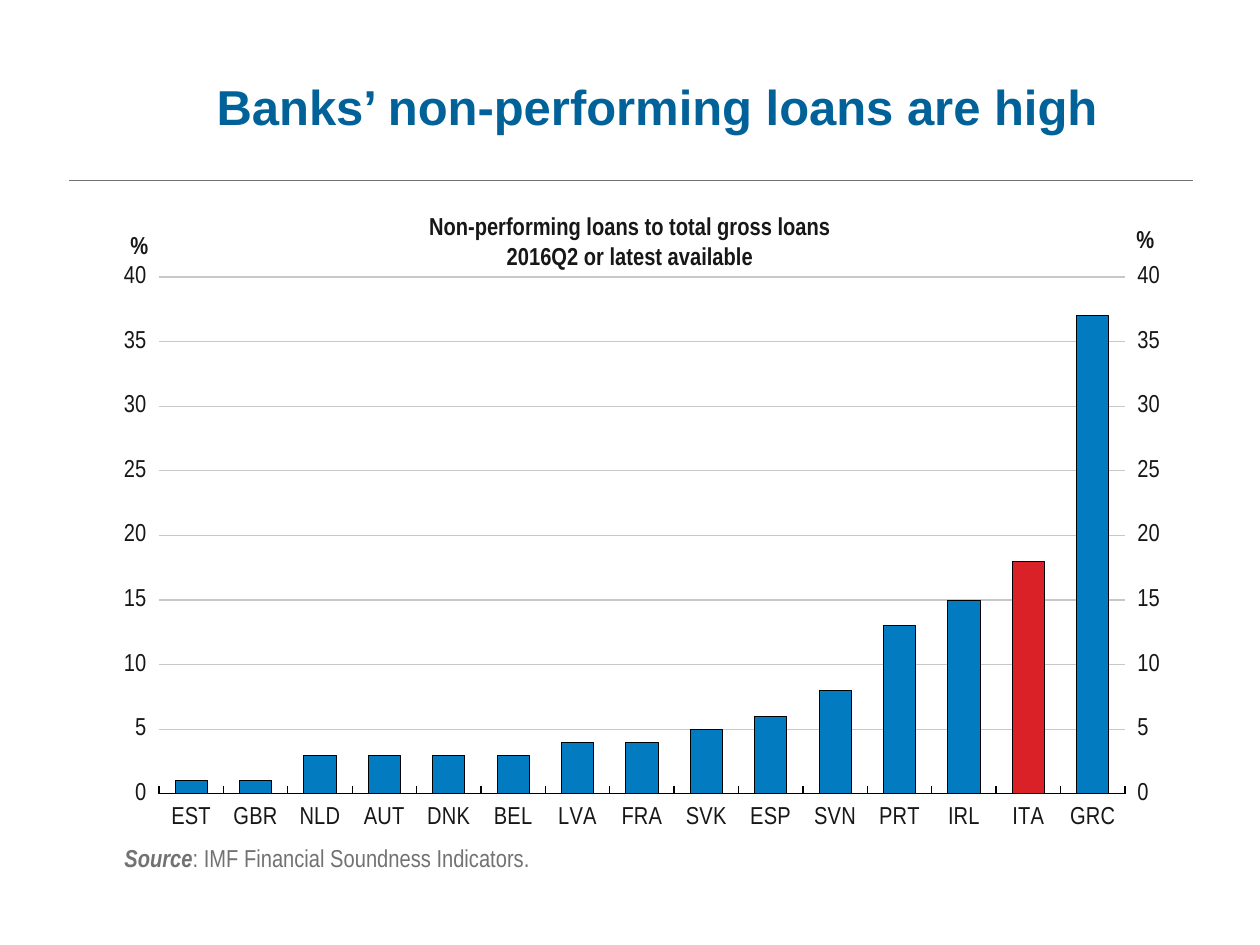
from copy import deepcopy

from lxml import etree
from pptx import Presentation
from pptx import util as u
from pptx.chart.data import CategoryChartData
from pptx.dml.color import RGBColor
from pptx.enum import chart as charts, shapes, text
from pptx.oxml.ns import qn

# Content
TITLE = "Banks’ non-performing loans are high"
SUBTITLE = "Non-performing loans to total gross loans\v2016Q2 or latest available"
SOURCE = ("Source", ": IMF Financial Soundness Indicators.")
UNIT = "%"
LOANS = {
    "EST": 1, "GBR": 1, "NLD": 3, "AUT": 3, "DNK": 3,
    "BEL": 3, "LVA": 4, "FRA": 4, "SVK": 5, "ESP": 6,
    "SVN": 8, "PRT": 13, "IRL": 15, "ITA": 18, "GRC": 37,
}
HIGHLIGHT = "ITA"

# Style
NARROW = "Arial Narrow"
NAVY, BLUE, RED = "006299", "037BC1", "DA2128"
INK, GREY, GRID, BLACK, WHITE = "171717", "727272", "C8C8C8", "000000", "FFFFFF"

# Places in px: left, top, width, height
PAGE = (1260, 945)
TITLE_AT = (94, 35, 1126, 141)
RULE_AT = (69, 180, 1193, 180)
CHART_AT = (112, 204, 1053, 631)
PLOT_AT = (159, 277, 966, 517)
SUBTITLE_AT = (315, 205, 630, 72)
SOURCE_AT = (112, 837, 964, 72)
LEFT_UNIT_AT = (126, 229)
RIGHT_UNIT_AT = (1132, 223)


def px(*lengths):
    return [u.Emu(round(n * 914400 / 126)) for n in lengths]


def color(value):
    return RGBColor.from_string(value)


def style_font(font, size, name, value, bold=False):
    font.size, font.name, font.bold = u.Pt(size), name, bold
    font.color.rgb = color(value)


def style_line(line, value, width):
    line.color.rgb = color(value)
    line.width = u.Pt(width)


def style_bar(bar, value):
    bar.format.fill.solid()
    bar.format.fill.fore_color.rgb = color(value)
    style_line(bar.format.line, BLACK, 0.5)


def add_text(page, place):
    box = page.shapes.add_textbox(*px(*place))
    box.text_frame.word_wrap = True
    return box.text_frame.paragraphs[0]


def set_layout(layout, place, inner=False):
    """Fix a chart part at a place given in page px."""
    for child in list(layout):
        layout.remove(child)
    manual = etree.SubElement(layout, qn("c:manualLayout"))
    left, top, width, height = CHART_AT
    x, y, *size = place
    values = {"xMode": "edge", "yMode": "edge",
              "x": (x - left) / width, "y": (y - top) / height}
    if inner:
        values = {"layoutTarget": "inner", **values,
                  "w": size[0] / width, "h": size[1] / height}
    for tag, value in values.items():
        shown = value if isinstance(value, str) else f"{value:.4f}"
        etree.SubElement(manual, qn(f"c:{tag}"), val=shown)


def add_right_axis(plot_area):
    """Move the second series to its own axes, with values on the right."""
    left_bars = plot_area.find(qn("c:barChart"))
    right_bars = deepcopy(left_bars)
    left_bars.remove(left_bars.findall(qn("c:ser"))[1])
    right_bars.remove(right_bars.find(qn("c:ser")))
    left_bars.addnext(right_bars)

    left_values = plot_area.find(qn("c:valAx"))
    values = deepcopy(left_values)
    categories = deepcopy(plot_area.find(qn("c:catAx")))
    left_values.addnext(values)
    values.addnext(categories)

    ids = [part.get("val") for part in left_bars.findall(qn("c:axId"))]
    new_ids = dict(zip(ids, ("5001", "5002")))
    for group in (right_bars, values, categories):
        for part in group.iter(qn("c:axId"), qn("c:crossAx")):
            part.set("val", new_ids[part.get("val")])

    categories.find(qn("c:delete")).set("val", "1")
    values.find(qn("c:axPos")).set("val", "r")
    values.find(qn("c:crosses")).set("val", "max")
    values.remove(values.find(qn("c:majorGridlines")))
    set_layout(values.find(qn("c:title")).find(qn("c:layout")), RIGHT_UNIT_AT)


def add_loans_chart(page):
    data = CategoryChartData()
    data.categories = list(LOANS)
    data.add_series("Series 1", list(LOANS.values()))
    data.add_series("Series 2", [None] * len(LOANS))
    chart = page.shapes.add_chart(
        charts.XL_CHART_TYPE.COLUMN_CLUSTERED, *px(*CHART_AT), data).chart
    chart.has_title = chart.has_legend = False
    style_font(chart.font, 14, NARROW, INK)

    # Bars
    plot = chart.plots[0]
    plot.gap_width = 100
    plot.vary_by_categories = False
    bars = plot.series[0]
    bars.invert_if_negative = False
    style_bar(bars, BLUE)
    style_bar(bars.points[list(LOANS).index(HIGHLIGHT)], RED)

    # Axes
    countries, share = chart.category_axis, chart.value_axis
    countries.tick_label_position = charts.XL_TICK_LABEL_POSITION.LOW
    countries.major_tick_mark = charts.XL_TICK_MARK.INSIDE
    style_line(countries.format.line, BLACK, 0.75)
    share.minimum_scale, share.maximum_scale, share.major_unit = 0, 40, 5
    share.major_tick_mark = charts.XL_TICK_MARK.CROSS
    share.tick_labels.number_format = "General"
    share.tick_labels.number_format_is_linked = False
    share.format.line.fill.background()
    style_line(share.major_gridlines.format.line, GRID, 0.75)

    # Unit above the axis, upright
    frame = share.axis_title.text_frame
    frame.text = UNIT
    style_font(frame.paragraphs[0].font, 14, NARROW, INK, True)
    title = share.axis_title._element
    turn = next(title.iter(qn("a:bodyPr")))
    turn.set("rot", "0")
    turn.set("vert", "horz")
    set_layout(title.find(qn("c:layout")), LEFT_UNIT_AT)

    # Plot area
    plot_area = next(chart._chartSpace.iter(qn("c:plotArea")))
    layout = plot_area.find(qn("c:layout"))
    if layout is None:
        layout = etree.Element(qn("c:layout"))
        plot_area.insert(0, layout)
    set_layout(layout, PLOT_AT, inner=True)
    add_right_axis(plot_area)
    area = etree.SubElement(plot_area, qn("c:spPr"))
    fill = etree.SubElement(area, qn("a:solidFill"))
    etree.SubElement(fill, qn("a:srgbClr"), val=WHITE)


def main():
    deck = Presentation()
    deck.slide_width, deck.slide_height = px(*PAGE)
    page = deck.slides.add_slide(deck.slide_layouts[5])

    # Title and rule
    title = page.shapes.title
    title.left, title.top, title.width, title.height = px(*TITLE_AT)
    title.text_frame.text = TITLE
    title.text_frame.vertical_anchor = text.MSO_ANCHOR.MIDDLE
    para = title.text_frame.paragraphs[0]
    para.alignment = text.PP_ALIGN.CENTER
    style_font(para.font, 28, "Arial", NAVY, True)
    rule = page.shapes.add_connector(shapes.MSO_CONNECTOR.STRAIGHT, *px(*RULE_AT))
    style_line(rule.line, GREY, 0.5)
    etree.SubElement(rule._element.spPr, qn("a:effectLst"))

    add_loans_chart(page)

    # Chart heading and source
    para = add_text(page, SUBTITLE_AT)
    para.text = SUBTITLE
    para.alignment = text.PP_ALIGN.CENTER
    style_font(para.font, 14, NARROW, INK, True)
    para = add_text(page, SOURCE_AT)
    style_font(para.font, 14, NARROW, GREY)
    for words in SOURCE:
        para.add_run().text = words
    label = para.runs[0].font
    label.bold = label.italic = True

    deck.save("out.pptx")


if __name__ == "__main__":
    main()
